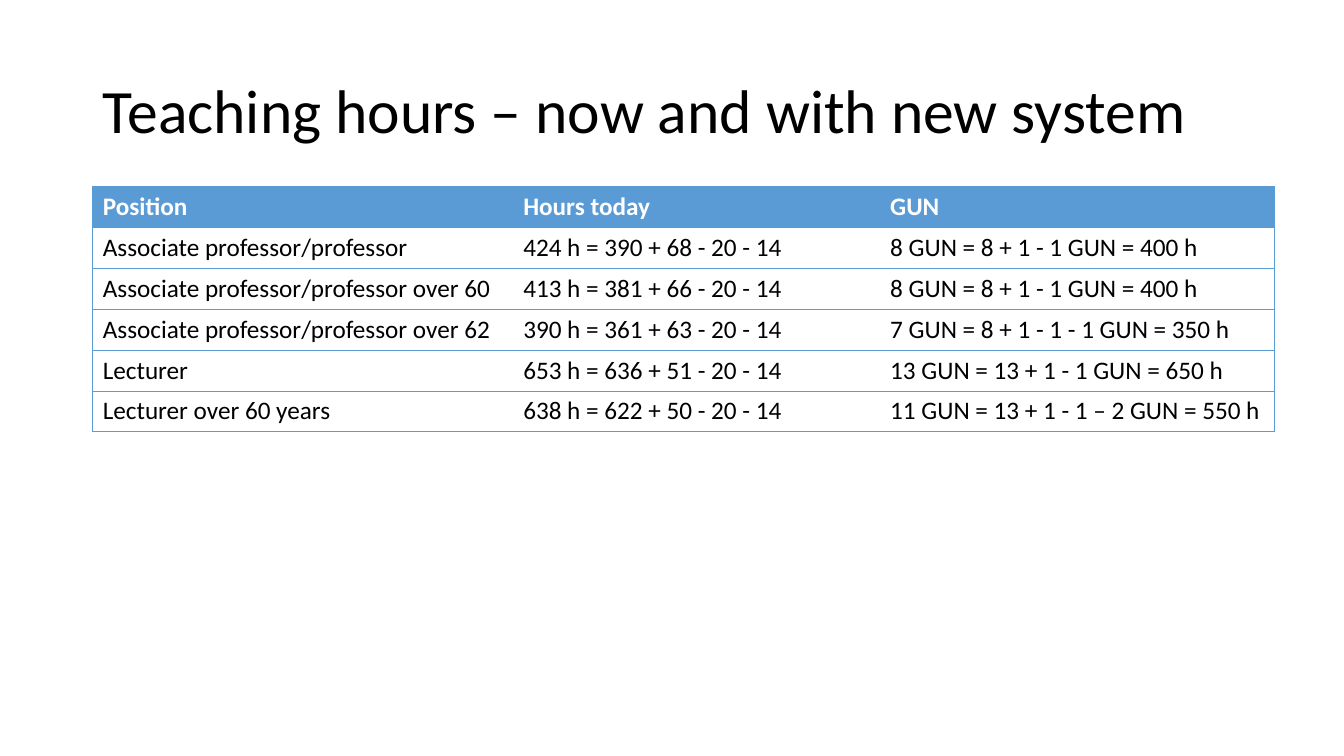
from dataclasses import dataclass

from lxml import etree
from pptx import Presentation
from pptx import util as u
from pptx.dml.color import RGBColor
from pptx.enum import text
from pptx.oxml.ns import qn


@dataclass(frozen=True)
class Theme:
    font: str = "Calibri"
    title_size: int = 44
    table_size: int = 18
    accent: str = "5B9BD5"
    ink: str = "000000"
    header_ink: str = "FFFFFF"
    rule_width: float = 0.5


theme = Theme()


def set_font(paragraph, size, color, bold=False):
    font = paragraph.font
    font.name, font.size, font.bold = theme.font, u.Pt(size), bold
    font.color.rgb = RGBColor.from_string(color)


def add_border(cell, side, visible):
    """Append one cell edge; call in the order L, R, T, B and before filling."""
    edge = etree.SubElement(cell._tc.get_or_add_tcPr(), qn(f"a:ln{side}"))
    edge.set("w", str(u.Pt(theme.rule_width)))
    if visible:
        paint = etree.SubElement(edge, qn("a:solidFill"))
        etree.SubElement(paint, qn("a:srgbClr")).set("val", theme.accent)
    else:
        etree.SubElement(edge, qn("a:noFill"))


teaching_hours = [
    ("Position", "Hours today", "GUN"),
    ("Associate professor/professor", "424 h = 390 + 68 - 20 - 14", "8 GUN = 8 + 1 - 1 GUN = 400 h"),
    ("Associate professor/professor over 60", "413 h = 381 + 66 - 20 - 14", "8 GUN = 8 + 1 - 1 GUN = 400 h"),
    ("Associate professor/professor over 62", "390 h = 361 + 63 - 20 - 14", "7 GUN = 8 + 1 - 1 - 1 GUN = 350 h"),
    ("Lecturer", "653 h = 636 + 51 - 20 - 14", "13 GUN = 13 + 1 - 1 GUN = 650 h"),
    ("Lecturer over 60 years", "638 h = 622 + 50 - 20 - 14", "11 GUN = 13 + 1 - 1 – 2 GUN = 550 h"),
]

deck = Presentation()
deck.slide_width, deck.slide_height = u.Inches(13.33), u.Inches(7.5)
slide = deck.slides.add_slide(deck.slide_layouts.get_by_name("Title Only"))

margin = u.Inches(0.92)
table_top = u.Inches(1.85)
row_height = u.Inches(2.43 / len(teaching_hours))
column_widths = [u.Inches(width) for width in (4.17, 3.64, 3.91)]

heading = slide.shapes.title
heading.left, heading.top = margin, u.Inches(0.4)
heading.width, heading.height = deck.slide_width - 2 * margin, table_top - heading.top
heading.text_frame.text = "Teaching hours – now and with new system"
heading.text_frame.vertical_anchor = text.MSO_ANCHOR.MIDDLE
heading_line = heading.text_frame.paragraphs[0]
heading_line.alignment = text.PP_ALIGN.LEFT
heading_line.line_spacing = 0.9
set_font(heading_line, theme.title_size, theme.ink)

hours_table = slide.shapes.add_table(
    len(teaching_hours), len(column_widths), margin, table_top,
    sum(column_widths), row_height * len(teaching_hours),
).table
hours_table.horz_banding = False
for column, width in zip(hours_table.columns, column_widths):
    column.width = width

last_column = len(column_widths) - 1
for row_index, entries in enumerate(teaching_hours):
    hours_table.rows[row_index].height = row_height
    is_header = row_index == 0
    for column_index, entry in enumerate(entries):
        cell = hours_table.cell(row_index, column_index)
        cell.text = entry
        ink = theme.header_ink if is_header else theme.ink
        set_font(cell.text_frame.paragraphs[0], theme.table_size, ink, bold=is_header)
        add_border(cell, "L", column_index == 0)
        add_border(cell, "R", column_index == last_column)
        add_border(cell, "T", True)
        add_border(cell, "B", True)
        if is_header:
            cell.fill.solid()
            cell.fill.fore_color.rgb = RGBColor.from_string(theme.accent)
        else:
            cell.fill.background()

deck.save("out.pptx")
